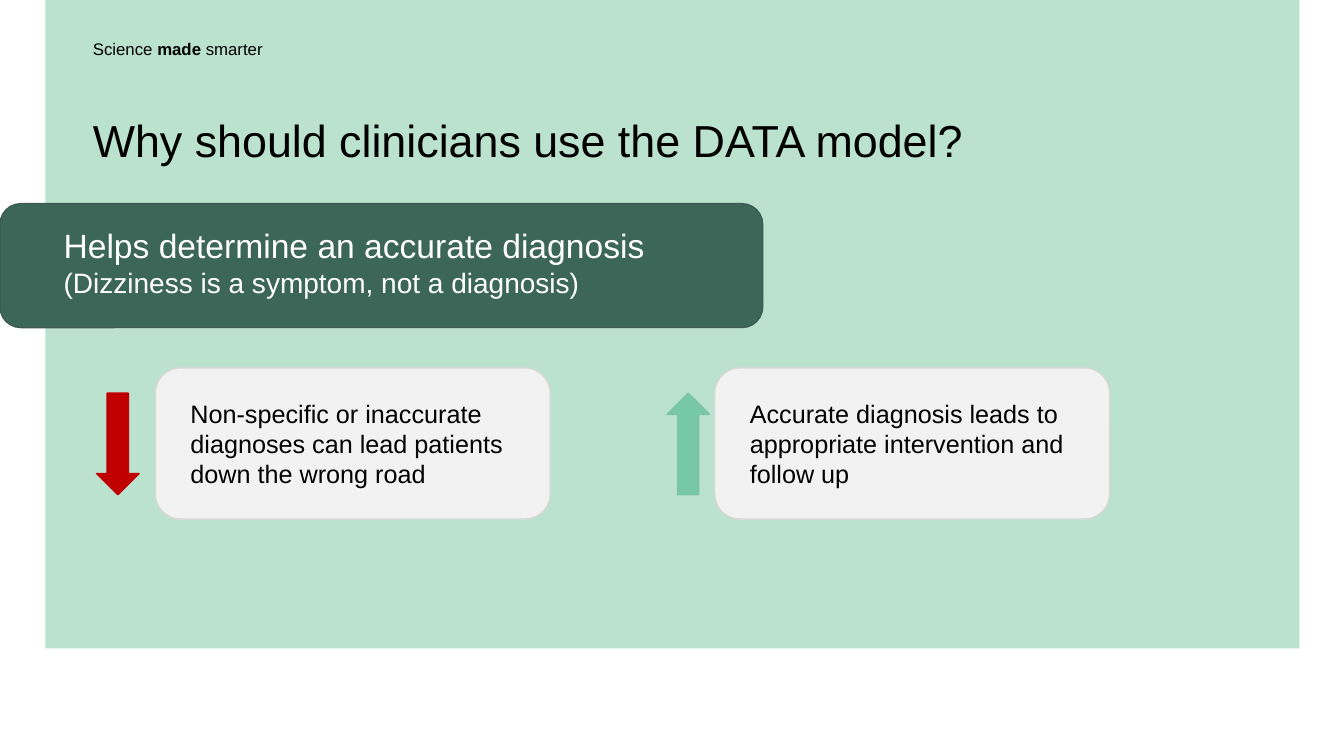
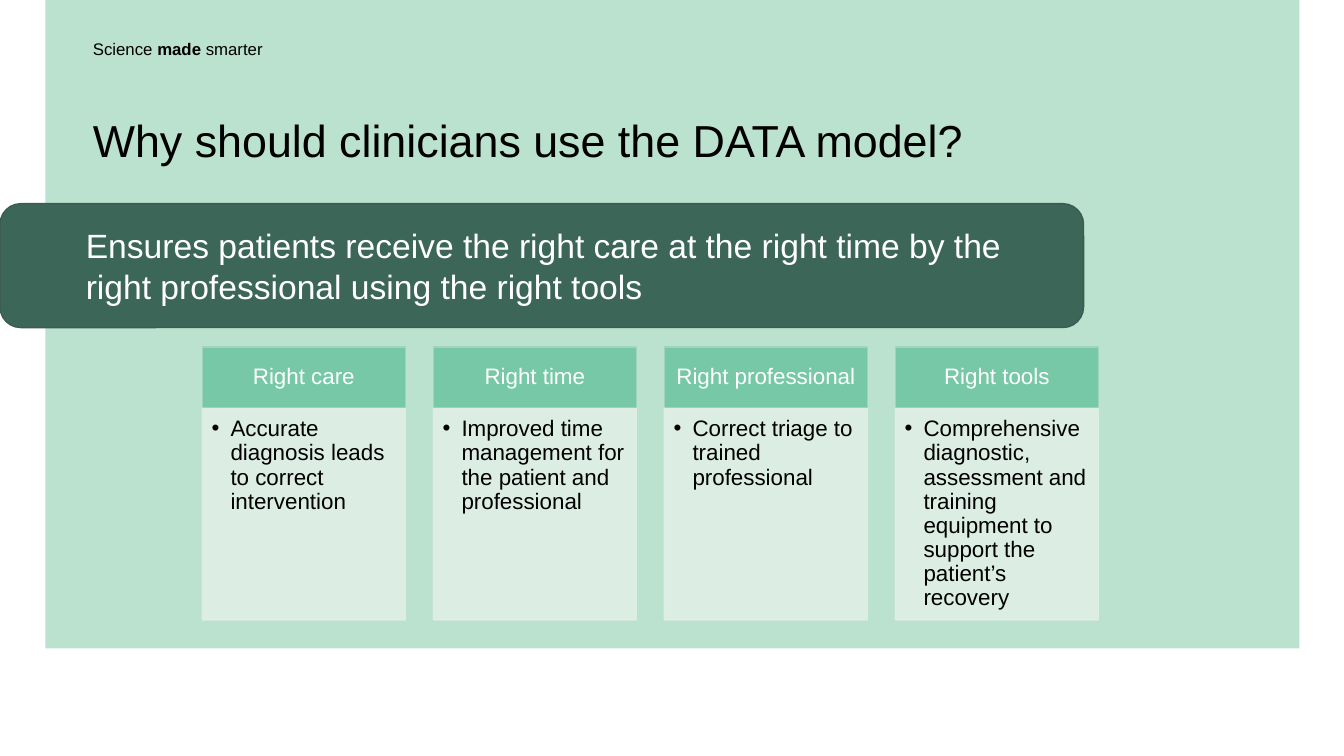
import dataclasses

import pptx
import pptx.dml.color
import pptx.enum.shapes
import pptx.enum.text
import pptx.oxml
import pptx.oxml.ns
import pptx.util

SHAPE = pptx.enum.shapes.MSO_SHAPE
ANCHOR = pptx.enum.text.MSO_ANCHOR
ALIGN = pptx.enum.text.PP_ALIGN


@dataclasses.dataclass(frozen=True)
class Theme:
    font: str = "Arial"
    black: str = "000000"
    white: str = "FFFFFF"
    panel: str = "BBE1CF"
    dark: str = "3C6657"
    dark_edge: str = "3C5B56"
    card: str = "F2F2F2"
    card_edge: str = "D9D9D9"
    red: str = "C00000"
    green: str = "77C8A7"
    green_edge: str = "7DC4A3"
    head_edge: str = "A2D3BC"
    body: str = "E0EFE7"
    title: int = 32
    lead: int = 24
    sub: int = 20
    note: int = 18
    label: int = 16
    small: int = 12
    tight: float = 0.9


def cell(count):
    """Length of a number of grid cells; the slide has 160 columns and 90 rows."""
    return pptx.util.Inches(count / 12)


def place(box):
    return [cell(side) for side in box]


def tint(code):
    return pptx.dml.color.RGBColor.from_string(code)


def node(tag, **pairs):
    made = pptx.oxml.parse_xml(f"<a:{tag} {pptx.oxml.ns.nsdecls('a')}/>")
    for key, value in pairs.items():
        made.set(key, value)
    return made


class Deck:
    def __init__(self, theme):
        self.theme = theme
        self.file = pptx.Presentation()
        self.file.slide_width, self.file.slide_height = cell(160), cell(90)
        self.base = self.file.slide_layouts[5]
        self.slide = None

    def start(self, title):
        first = self.slide is None
        self.slide = self.file.slides.add_slide(self.base)
        if first:
            self.frame()
        head = self.slide.shapes.title
        head.left, head.top, head.width, head.height = place((11.05, 14.15, 138, 5.4))
        head.text_frame.auto_size = pptx.enum.text.MSO_AUTO_SIZE.NONE
        self.label(head, [[(title, self.theme.title, False)]], self.theme.black,
                   anchor=ANCHOR.TOP, space=self.theme.tight)

    def frame(self):
        """Put the panel and tagline on the layout, so that every slide shows them."""
        look = self.theme
        panel = self.shape(SHAPE.RECTANGLE, (5.4, 0, 149.3, 77.2), look.panel)
        tag = self.slide.shapes.add_textbox(*place((11.05, 4.7, 20.8, 2.4)))
        words = [("Science ", look.small, False), ("made ", look.small, True),
                 ("smarter", look.small, False)]
        self.label(tag, [words], look.black, space=look.tight)
        for index, part in enumerate((panel, tag)):
            part._element.nvSpPr.cNvPr.id = 100 + index
            self.base.shapes._spTree.append(part._element)

    def shape(self, kind, box, fill, edge=None, alpha=None):
        made = self.slide.shapes.add_shape(kind, *place(box))
        made.shadow.inherit = False
        made.fill.solid()
        made.fill.fore_color.rgb = tint(fill)
        if edge:
            made.line.color.rgb = tint(edge)
            made.line.width = pptx.util.Pt(1)
        else:
            made.line.fill.background()
        if alpha:
            for color in made._element.spPr.iter(pptx.oxml.ns.qn("a:srgbClr")):
                color.append(node("alpha", val=str(alpha * 1000)))
        return made

    def label(self, shape, lines, color, pad=(0, 0, 0, 0), anchor=ANCHOR.MIDDLE,
              align=ALIGN.LEFT, space=1.0, bullet=False):
        """Fill a shape; lines hold runs of (text, size, bold), pad is left, top, right, bottom."""
        text = shape.text_frame
        text.word_wrap = True
        text.vertical_anchor = anchor
        (text.margin_left, text.margin_top,
         text.margin_right, text.margin_bottom) = place(pad)
        for index, runs in enumerate(lines):
            para = text.add_paragraph() if index else text.paragraphs[0]
            if bullet:
                props = para._p.get_or_add_pPr()
                props.set("marL", str(cell(2.25)))
                props.set("indent", str(-cell(2.25)))
                props.append(node("buFont", typeface=self.theme.font))
                props.append(node("buChar", char="•"))
            para.alignment = align
            para.line_spacing = space
            para.space_before = pptx.util.Pt(0)
            for words, size, bold in runs:
                run = para.add_run()
                run.text = words
                run.font.name = self.theme.font
                run.font.size = pptx.util.Pt(size)
                run.font.bold = bold
                run.font.color.rgb = tint(color)

    def banner(self, width, lines, pad):
        look = self.theme
        bar = self.shape(SHAPE.ROUNDED_RECTANGLE, (0, 24.25, width, 14.75),
                         look.dark, look.dark_edge)
        self.label(bar, lines, look.white, pad)

    def card(self, left, words):
        look = self.theme
        box = self.shape(SHAPE.ROUNDED_RECTANGLE, (left, 43.8, 47, 18),
                         look.card, look.card_edge)
        self.label(box, [[(words, look.note, False)]], look.black, (3.3, 0, 1.4, 0))

    def arrow(self, kind, left, fill, edge):
        self.shape(kind, (left, 46.8, 5.05, 12.1), fill, edge)

    def column(self, left, head, point):
        look = self.theme
        wide, top, high = 24.15, 41.3, 7.3
        cap = self.shape(SHAPE.RECTANGLE, (left, top, wide, high),
                         look.green, look.head_edge)
        self.label(cap, [[(head, look.label, False)]], look.white,
                   (1.4, 0.8, 1.4, 0.8), align=ALIGN.CENTER, space=look.tight)
        body = self.shape(SHAPE.RECTANGLE, (left, top + high, wide, 25.2),
                          look.body, look.body, alpha=90)
        self.label(body, [[(point, look.label, False)]], look.black,
                   (1.1, 1.1, 1.4, 1.7), ANCHOR.TOP, space=look.tight, bullet=True)


TITLE = "Why should clinicians use the DATA model?"
POINTS = [
    ("Right care", "Accurate diagnosis leads to correct intervention"),
    ("Right time", "Improved time management for the patient and professional"),
    ("Right professional", "Correct triage to trained professional"),
    ("Right tools", "Comprehensive diagnostic, assessment and training equipment "
                    "to support the patient’s recovery"),
]


def main():
    look = Theme()
    deck = Deck(look)

    deck.start(TITLE)
    deck.banner(90.8, [[("Helps determine an accurate diagnosis", look.lead, False)],
                       [("(Dizziness is a symptom, not a diagnosis)", look.sub, False)]],
                (6.85, 0, 0, 0.8))
    deck.card(18.5, "Non-specific or inaccurate diagnoses can lead patients "
                    "down the wrong road")
    deck.card(85.1, "Accurate diagnosis leads to appropriate intervention "
                    "and follow up")
    deck.arrow(SHAPE.DOWN_ARROW, 11.5, look.red, look.red)
    deck.arrow(SHAPE.UP_ARROW, 79.4, look.green, look.green_edge)

    deck.start(TITLE)
    deck.banner(129, [[("Ensures patients receive the right care at the right time by "
                        "the right professional using the right tools",
                        look.lead, False)]], (9.5, 0, 7.4, 0))
    for index, (head, point) in enumerate(POINTS):
        deck.column(24.1 + 27.5 * index, head, point)

    deck.file.save("out.pptx")


if __name__ == "__main__":
    main()
